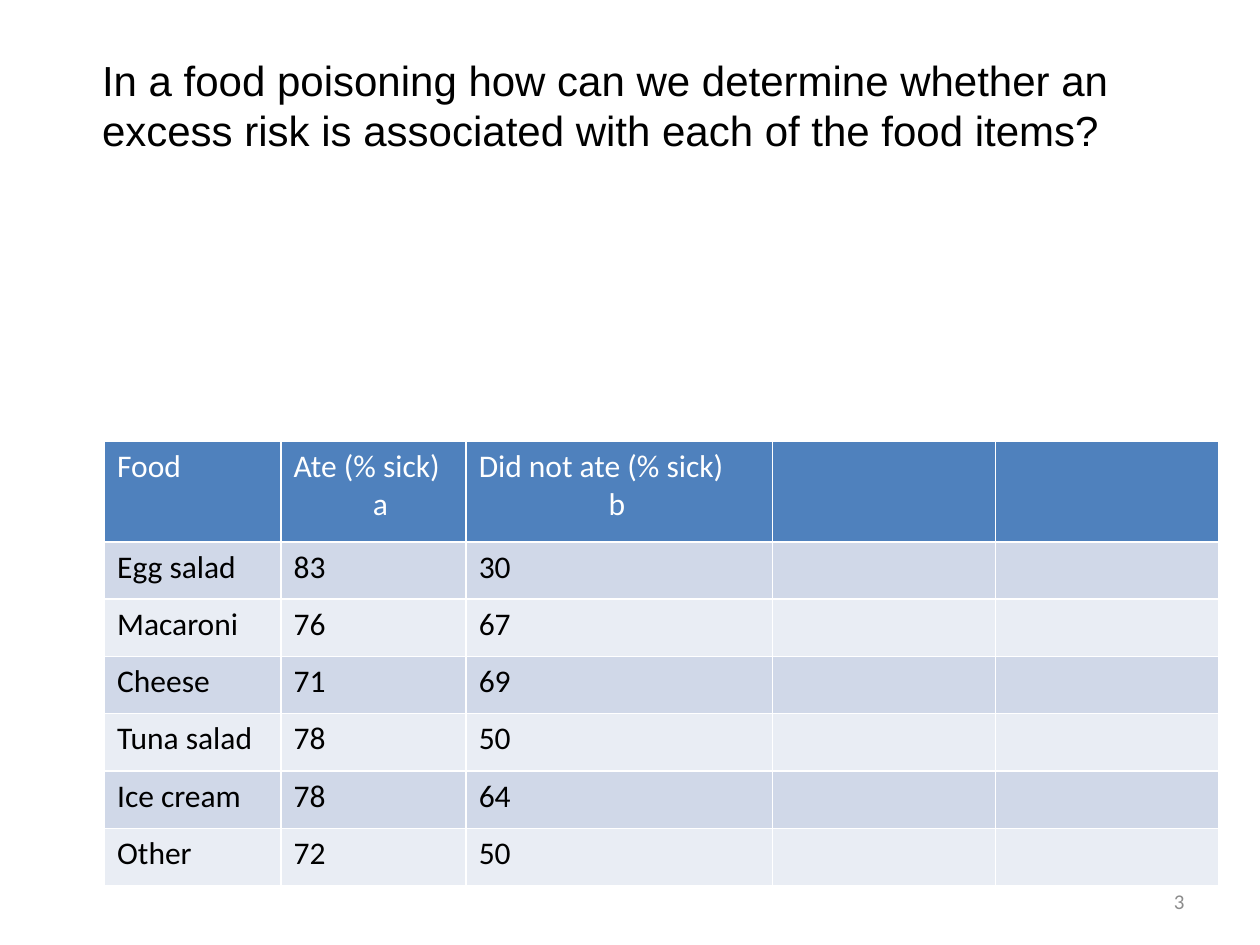
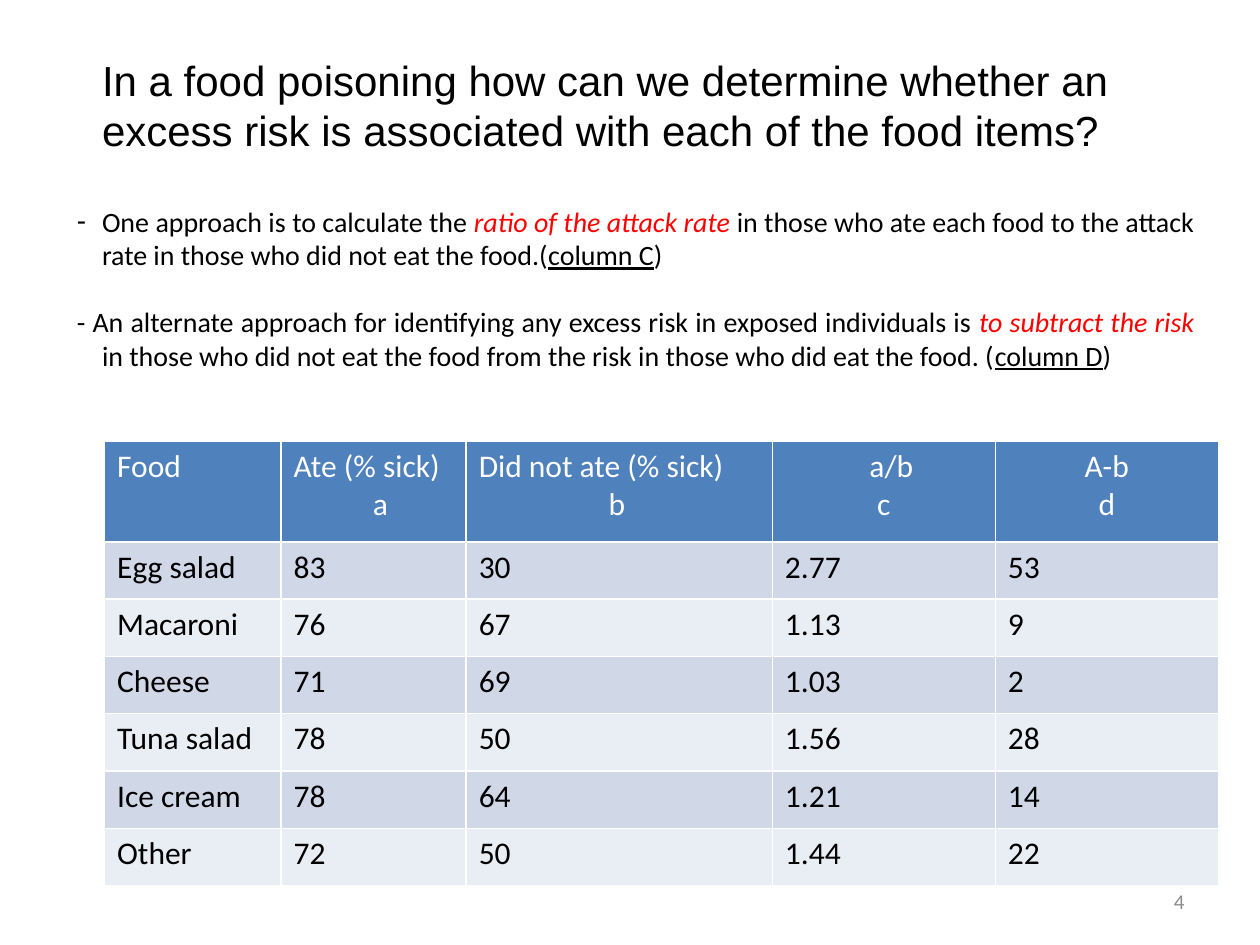
"""Build two slides on the excess risk of each food in a food poisoning."""
from lxml.etree import SubElement
from pptx import Presentation
from pptx.dml.color import RGBColor
from pptx.enum.text import MSO_ANCHOR, MSO_AUTO_SIZE, PP_ALIGN
from pptx.oxml.ns import qn
from pptx.util import Inches, Pt

BLACK = RGBColor(0x00, 0x00, 0x00)
WHITE = RGBColor(0xFF, 0xFF, 0xFF)
RED = RGBColor(0xFF, 0x00, 0x00)
GREY = RGBColor(0x8C, 0x8C, 0x8C)
BLUE = RGBColor(0x4F, 0x81, 0xBD)
BANDS = [RGBColor(0xD0, 0xD8, 0xE8), RGBColor(0xE9, 0xED, 0xF4)]

TITLE = ("In a food poisoning how can we determine whether an excess risk "
         "is associated with each of the food items?")
# Each header: lines, alignment, indents of the lines
HEADS = [
    (["Food"], PP_ALIGN.LEFT, [0]),
    (["Ate (% sick)", "a"], PP_ALIGN.LEFT, [0, 0.63]),
    (["Did not ate (% sick)", "b"], PP_ALIGN.LEFT, [0, 1.03]),
    (["a/b", "c"], PP_ALIGN.CENTER, [0.12, 0]),
    (["A-b", "d"], PP_ALIGN.CENTER, [0, 0]),
]
FOODS = [
    ("Egg salad", "83", "30", "2.77", "53"),
    ("Macaroni", "76", "67", "1.13", "9"),
    ("Cheese", "71", "69", "1.03", "2"),
    ("Tuna salad", "78", "50", "1.56", "28"),
    ("Ice cream", "78", "64", "1.21", "14"),
    ("Other", "72", "50", "1.44", "22"),
]
NOTES = [
    ("-", [("One approach is to calculate the ", ""),
           ("ratio of the attack rate ", "red"),
           ("in those who ate each food to the attack rate in those who "
            "did not eat the food.(", ""),
           ("column C", "line"), (")", "")]),
    (None, [("- An alternate approach for identifying any excess risk in "
             "exposed individuals is ", ""),
            ("to subtract the risk ", "red"),
            ("in those who did not eat the food from the risk in those who "
             "did eat the food. (", ""),
            ("column D", "line"), (")", "")]),
]
# Each slide: number, layout index, filled columns, notes
PAGES = [(3, 5, 3, []), (4, 1, 5, NOTES)]

LEFT, WIDTH, HANG = 0.51, 9.07, 0.2
WIDTHS = [1.4, 1.47, 2.43, 1.77, 1.77]
TALL, HEAD = 3.53, 0.8


def style(font, size, color, name="Calibri"):
    """Set the look of a font."""
    font.size, font.name, font.bold = Pt(size), name, False
    font.color.rgb = color


def indent(par, left, first=0):
    """Set the left margin and first-line indent of a paragraph."""
    props = par._p.get_or_add_pPr()
    props.set("marL", str(Inches(left)))
    props.set("indent", str(Inches(first)))
    return props


def place(shape, top, height):
    """Put a placeholder in the text column."""
    shape.left, shape.top = Inches(LEFT), Inches(top)
    shape.width, shape.height = Inches(WIDTH), Inches(height)
    frame = shape.text_frame
    frame.word_wrap, frame.auto_size = True, MSO_AUTO_SIZE.NONE
    frame.vertical_anchor = MSO_ANCHOR.TOP
    return frame


def add_title(slide):
    """Fill the title."""
    frame = place(slide.shapes.title, 0.38, 1)
    frame.text = TITLE
    par = frame.paragraphs[0]
    par.alignment = PP_ALIGN.LEFT
    indent(par, HANG)
    style(par.runs[0].font, 24, BLACK, "Arial")


def add_notes(slide, notes):
    """Fill the body with justified, hanging notes."""
    frame = place(slide.placeholders[1], 1.57, 1.7)
    for i, (mark, parts) in enumerate(notes):
        par = frame.add_paragraph() if i else frame.paragraphs[0]
        par.alignment = PP_ALIGN.JUSTIFY
        par.space_before = Pt(19 if i else 0)
        props = indent(par, HANG, -HANG)
        if mark:
            SubElement(props, qn("a:buChar")).set("char", mark)
        else:
            SubElement(props, qn("a:buNone"))
        for text, look in parts:
            run = par.add_run()
            run.text = text
            style(run.font, 16, RED if look == "red" else BLACK)
            run.font.italic = look == "red"
            run.font.underline = look == "line"


def fill_cell(cell, lines, fill, color):
    """Write the lines of one cell and colour it."""
    cell.fill.solid()
    cell.fill.fore_color.rgb = fill
    cell.text_frame.text = "\n".join(lines)
    for par in cell.text_frame.paragraphs:
        for run in par.runs:
            style(run.font, 18, color)


def add_grid(slide, shown):
    """Add the food table with the first columns filled."""
    grid = slide.shapes.add_table(
        len(FOODS) + 1, len(HEADS), Inches(0.83), Inches(3.5),
        Inches(sum(WIDTHS)), Inches(TALL)).table
    for col, width in zip(grid.columns, WIDTHS):
        col.width = Inches(width)
    for i, row in enumerate(grid.rows):
        row.height = Inches((TALL - HEAD) / len(FOODS) if i else HEAD)
    for c, (lines, align, shifts) in enumerate(HEADS):
        cell = grid.cell(0, c)
        fill_cell(cell, lines if c < shown else [], BLUE, WHITE)
        for par, shift in zip(cell.text_frame.paragraphs, shifts):
            par.alignment = align
            indent(par, shift)
        for r, food in enumerate(FOODS):
            fill_cell(grid.cell(r + 1, c), [food[c]] if c < shown else [],
                      BANDS[r % 2], BLACK)


def add_number(slide, number):
    """Add the slide number at the lower right."""
    box = slide.shapes.add_textbox(
        Inches(7.17), Inches(6.95), Inches(2.33), Inches(0.4))
    frame = box.text_frame
    frame.word_wrap, frame.vertical_anchor = True, MSO_ANCHOR.MIDDLE
    frame.text = str(number)
    par = frame.paragraphs[0]
    par.alignment = PP_ALIGN.RIGHT
    style(par.runs[0].font, 12, GREY)


def main():
    """Build and save the slides."""
    deck = Presentation()
    deck.slide_width, deck.slide_height = Inches(10), Inches(7.5)
    for number, layout, shown, notes in PAGES:
        slide = deck.slides.add_slide(deck.slide_layouts[layout])
        add_title(slide)
        if notes:
            add_notes(slide, notes)
        add_grid(slide, shown)
        add_number(slide, number)
    deck.save("out.pptx")


if __name__ == "__main__":
    main()
